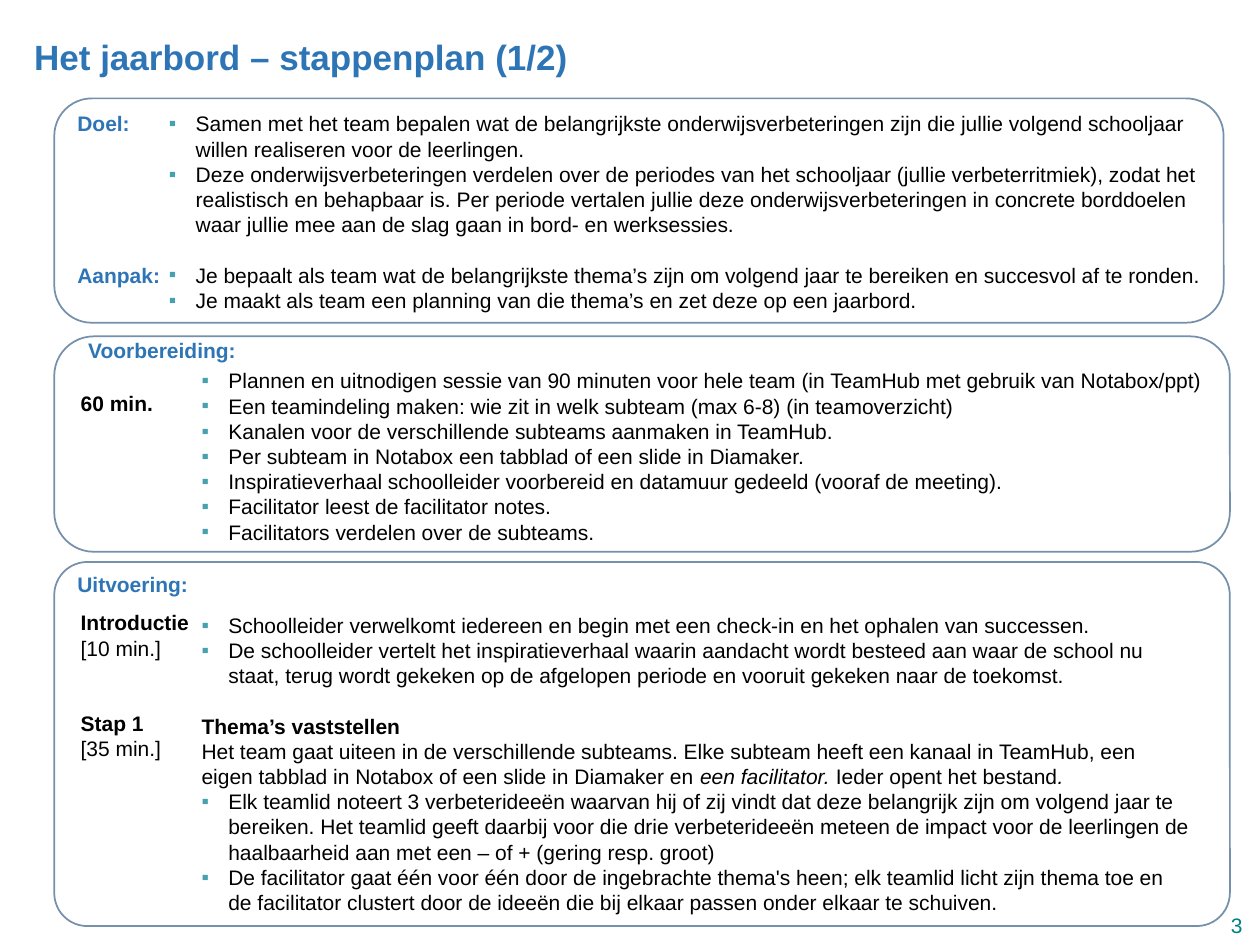
from lxml import etree
from pptx import Presentation
from pptx import util as u
from pptx.dml.color import RGBColor
from pptx.enum import shapes, text
from pptx.oxml.ns import qn

BLUE, BLACK, TEAL = "2E75B6", "000000", "008080"
BULLET, OUTLINE, WHITE = "47A0AF", "7490AA", "FFFFFF"
LINE = 14.4

PANELS = [
    (31, 56.2, 668.2, 128.2, 0.167),
    (31, 192.2, 671.8, 123.1, 0.184),
    (31, 321.1, 671.8, 208.1, 0.091),
]
HEADINGS = [
    ("Doel:", 44.2, 63.4),
    ("Aanpak:", 44.2, 63.4 + 6 * LINE),
    ("Voorbereiding:", 50.4, 193),
    ("Uitvoering:", 44.2, 326.9),
]
GOAL = [
    ("•", "Samen met het team bepalen wat de belangrijkste onderwijsverbeteringen zijn die jullie volgend schooljaar willen realiseren voor de leerlingen."),
    ("•", "Deze onderwijsverbeteringen verdelen over de periodes van het schooljaar (jullie verbeterritmiek), zodat het realistisch en behapbaar is. Per periode vertalen jullie deze onderwijsverbeteringen in concrete borddoelen waar jullie mee aan de slag gaan in bord- en werksessies."),
    ("•gap", "Je bepaalt als team wat de belangrijkste thema’s zijn om volgend jaar te bereiken en succesvol af te ronden."),
    ("•", "Je maakt als team een planning van die thema’s en zet deze op een jaarbord."),
]
PREPARATION = [("•", line) for line in (
    "Plannen en uitnodigen sessie van 90 minuten voor hele team (in TeamHub met gebruik van Notabox/ppt)",
    "Een teamindeling maken: wie zit in welk subteam (max 6-8) (in teamoverzicht)",
    "Kanalen voor de verschillende subteams aanmaken in TeamHub.",
    "Per subteam in Notabox een tabblad of een slide in Diamaker.",
    "Inspiratieverhaal schoolleider voorbereid en datamuur gedeeld (vooraf de meeting).",
    "Facilitator leest de facilitator notes.",
    "Facilitators verdelen over de subteams.",
)]
EXECUTION = [
    ("•", "Schoolleider verwelkomt iedereen en begin met een check-in en het ophalen van successen."),
    ("•", "De schoolleider vertelt het inspiratieverhaal waarin aandacht wordt besteed aan waar de school nu staat, terug wordt gekeken op de afgelopen periode en vooruit gekeken naar de toekomst."),
    ("gap", ("Thema’s vaststellen", "bold")),
    ("", "Het team gaat uiteen in de verschillende subteams. Elke subteam heeft een kanaal in TeamHub, een eigen tabblad in Notabox of een slide in Diamaker en ",
     ("een facilitator. ", "italic"), "Ieder opent het bestand", (".", "italic")),
    ("•", "Elk teamlid noteert 3 verbeterideeën waarvan hij of zij vindt dat deze belangrijk zijn om volgend jaar te bereiken. Het teamlid geeft daarbij voor die drie verbeterideeën meteen de impact voor de leerlingen de haalbaarheid aan met een – of + (gering resp. groot)"),
    ("•", "De facilitator gaat één voor één door de ingebrachte thema's heen; elk teamlid licht zijn thema toe en de facilitator clustert door de ideeën die bij elkaar passen onder elkaar te schuiven."),
]
TIMES = [
    ("", ("Introductie", "bold")),
    ("", "[10 min.]"),
    ("gapgap", ("Stap 1", "bold")),
    ("", "[35 min.]"),
]


def rgb(value):
    """Turn a hex string into a colour."""
    return RGBColor.from_string(value)


def apply(target, values):
    """Set each attribute in values on target."""
    for name, value in values.items():
        setattr(target, name, value)


def style_font(font, color, size=12):
    """Give a font the shared typeface with a size and colour."""
    apply(font, {"name": "Arial", "size": u.Pt(size)})
    font.color.rgb = rgb(color)


def clear_frame(frame, **values):
    """Remove the margins of a text frame and set its format."""
    margins = {f"margin_{side}": 0 for side in ("left", "right", "top", "bottom")}
    apply(frame, {"word_wrap": True, "auto_size": text.MSO_AUTO_SIZE.NONE,
                  "vertical_anchor": text.MSO_ANCHOR.TOP, **margins, **values})


def add_bullet(paragraph):
    """Give a paragraph a square bullet with a hanging indent."""
    properties = paragraph._p.get_or_add_pPr()
    properties.set("marL", str(u.Pt(15.3)))
    properties.set("indent", str(u.Pt(-15.3)))
    color = etree.SubElement(properties, qn("a:buClr"))
    etree.SubElement(color, qn("a:srgbClr"), val=BULLET)
    etree.SubElement(properties, qn("a:buFont"), typeface="Arial")
    etree.SubElement(properties, qn("a:buChar"), char="▪")


def add_text(slide, box, paragraphs, color=BLACK, **frame_values):
    """Add a text box of paragraphs, each a layout mark followed by its runs."""
    frame = slide.shapes.add_textbox(*map(u.Pt, box)).text_frame
    clear_frame(frame, **frame_values)
    for index, (mark, *runs) in enumerate(paragraphs):
        paragraph = frame.paragraphs[0] if index == 0 else frame.add_paragraph()
        apply(paragraph, {"line_spacing": u.Pt(LINE),
                          "space_before": u.Pt(LINE * mark.count("gap"))})
        if "•" in mark:
            add_bullet(paragraph)
        for item in runs:
            words, *styles = (item,) if isinstance(item, str) else item
            run = paragraph.add_run()
            run.text = words
            style_font(run.font, color)
            apply(run.font, {style: True for style in styles})


def add_panel(slide, left, top, width, height, rounding):
    """Add a white rounded panel with a thin outline."""
    shape = slide.shapes.add_shape(shapes.MSO_SHAPE.ROUNDED_RECTANGLE,
                                   *map(u.Pt, (left, top, width, height)))
    shape.adjustments[0] = rounding
    shape.shadow.inherit = False
    shape.fill.solid()
    shape.fill.fore_color.rgb = rgb(WHITE)
    shape.line.color.rgb = rgb(OUTLINE)
    shape.line.width = u.Pt(1)


def set_title(slide, words):
    """Place and format the slide title."""
    title = slide.shapes.title
    apply(title, {"left": u.Pt(19.5), "top": u.Pt(20.2),
                  "width": u.Pt(466), "height": u.Pt(24.5)})
    clear_frame(title.text_frame)
    paragraph = title.text_frame.paragraphs[0]
    paragraph.text = words
    paragraph.alignment = text.PP_ALIGN.LEFT
    style_font(paragraph.font, BLUE, 20)
    paragraph.font.bold = True


def main():
    """Build the slide and save it."""
    presentation = Presentation()
    apply(presentation, {"slide_width": u.Pt(720), "slide_height": u.Pt(540)})
    slide = presentation.slides.add_slide(presentation.slide_layouts[5])
    set_title(slide, "Het jaarbord – stappenplan (1/2)")
    for panel in PANELS:
        add_panel(slide, *panel)
    for words, left, top in HEADINGS:
        add_text(slide, (left, top, 120, LINE), [("", (words, "bold"))], BLUE)
    add_text(slide, (96.5, 63.4, 600, 116), GOAL)
    add_text(slide, (46.1, 223.2, 104, LINE), [("", ("60 min.", "bold"))])
    add_text(slide, (115.2, 210.2, 584.6, 101.5), PREPARATION)
    add_text(slide, (46.1, 348.5, 104, 87), TIMES)
    add_text(slide, (115.2, 349.9, 566.6, 174.2), EXECUTION)
    add_text(slide, (703.4, 522.7, 16.6, 12.2), [("", "3")], TEAL,
             word_wrap=False, vertical_anchor=text.MSO_ANCHOR.MIDDLE)
    presentation.save("out.pptx")


if __name__ == "__main__":
    main()
